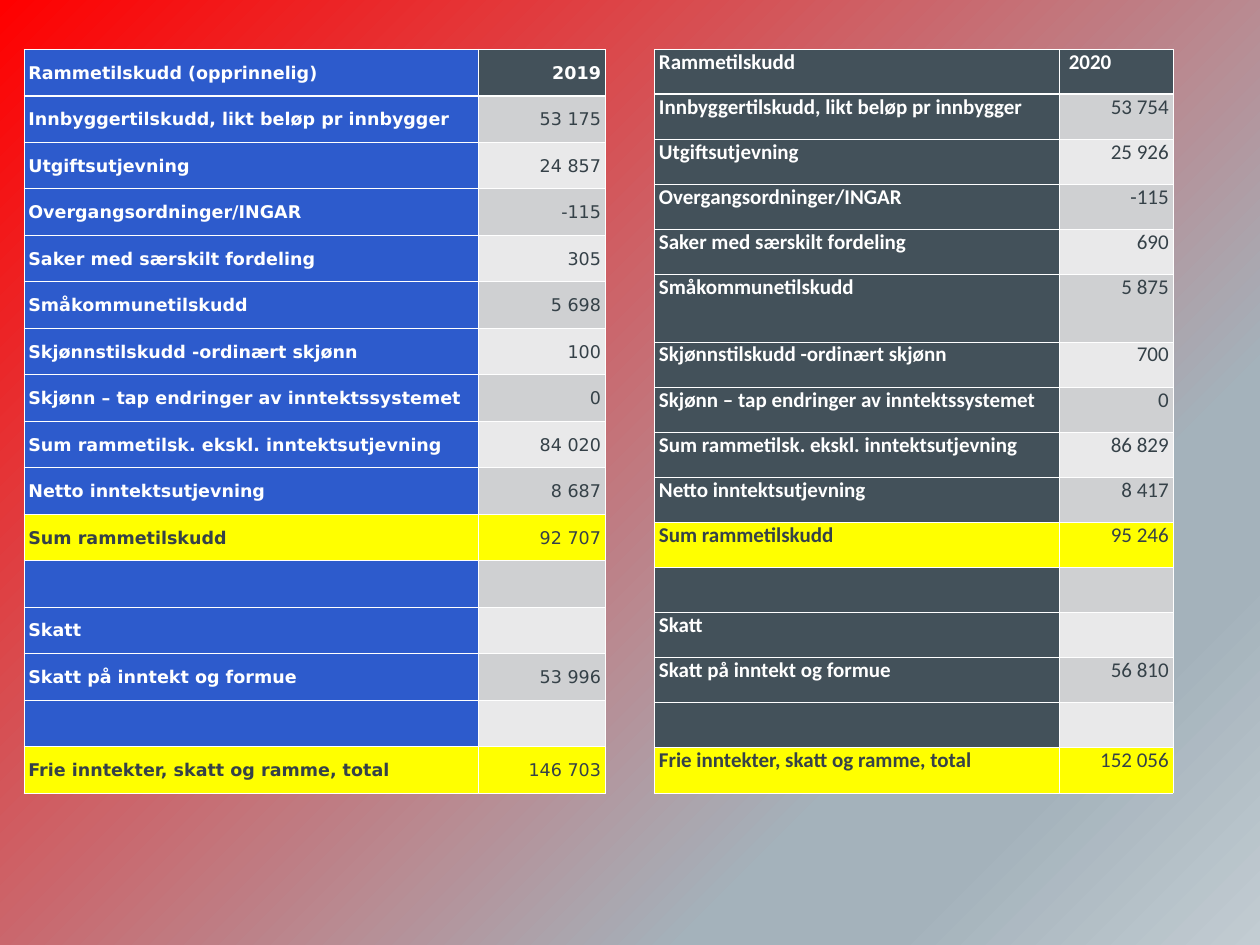
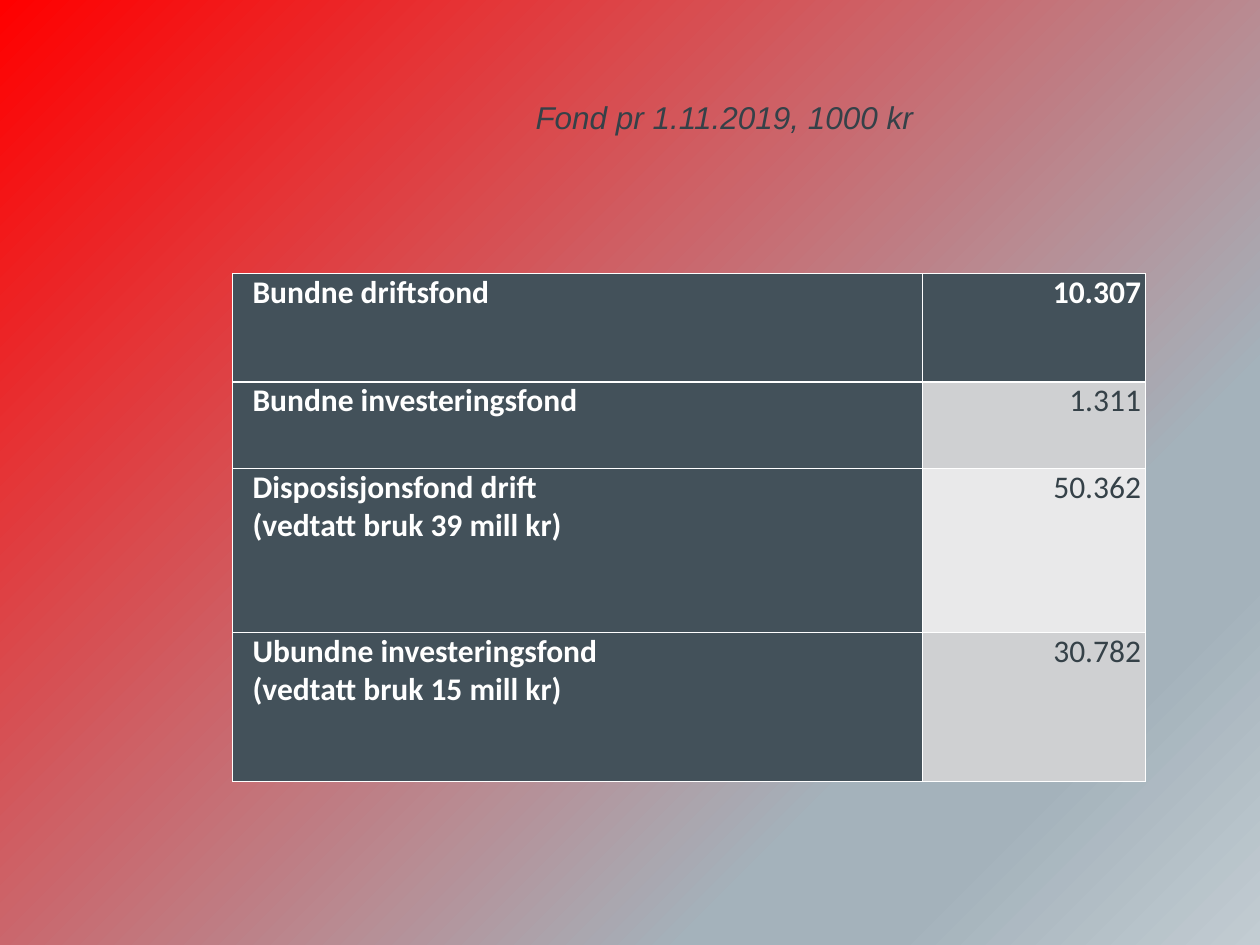
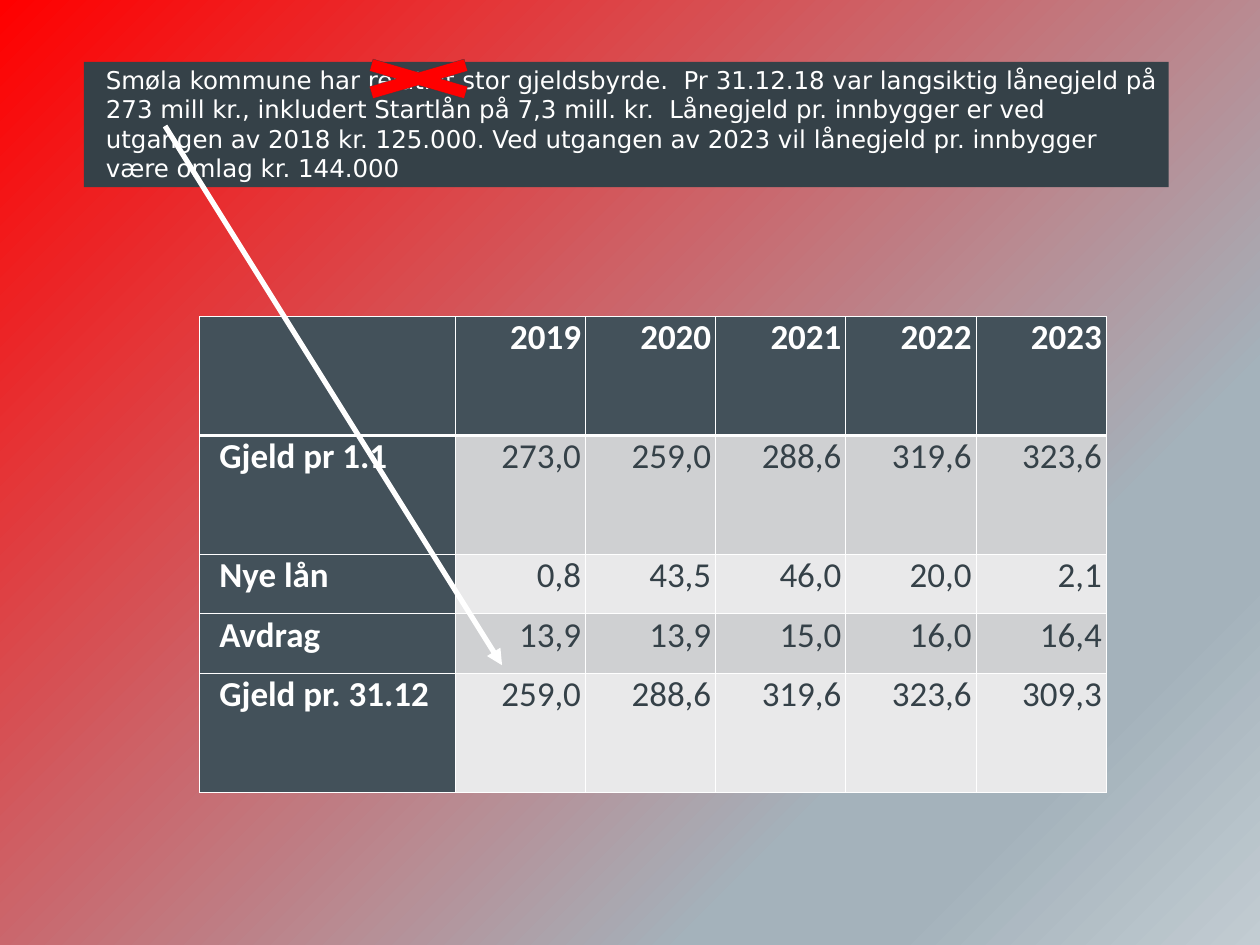
from dataclasses import dataclass

from pptx import Presentation
from pptx.dml.color import RGBColor
from pptx.enum.shapes import MSO_CONNECTOR, MSO_SHAPE
from pptx.enum.text import MSO_ANCHOR, MSO_AUTO_SIZE, PP_ALIGN
from pptx.oxml.ns import qn
from pptx.util import Pt
from lxml.etree import SubElement


@dataclass(frozen=True)
class Theme:
    white: str = "FFFFFF"
    dark: str = "354148"
    slate: str = "43515A"
    blue: str = "2D5BCC"
    yellow: str = "FFFF00"
    red: str = "FF0000"
    edge: str = "323C43"
    bands: tuple = ("E9E9EA", "CFD0D2")
    fade: tuple = ((0, "FF0000"), (74, "A4B2BB"), (83, "A4B2BB"), (100, "C2CCD2"))
    sans: str = "DejaVu Sans"
    body: str = "Calibri"
    head: str = "Arial"
    tiny: int = 20
    small: int = 24
    note: int = 28
    large: int = 36
    huge: int = 40


theme = Theme()
rgb = RGBColor.from_string


def write(frame, text, face, size, color, bold=False, italic=False,
          align=PP_ALIGN.LEFT, space=1.0):
    """Fill a text frame, one paragraph per line of text."""
    for i, line in enumerate(text.split("\n")):
        para = frame.add_paragraph() if i else frame.paragraphs[0]
        para.alignment = align
        para.line_spacing = space
        run = para.add_run()
        run.text = line
        font = run.font
        font.name, font.size = face, Pt(size)
        font.bold, font.italic = bold, italic
        font.color.rgb = rgb(color)


def grid(slide, left, top, cols, rows, data, face, size, label=theme.slate,
         inset=5, anchor=MSO_ANCHOR.TOP, space=1.0):
    """Add a table with a header row, a label column and banded values."""
    table = slide.shapes.add_table(
        len(rows), len(cols), Pt(left), Pt(top), Pt(sum(cols)), Pt(sum(rows))).table
    table.horz_banding = False
    for col, width in zip(table.columns, cols):
        col.width = Pt(width)
    for r, (height, line) in enumerate(zip(rows, data)):
        table.rows[r].height = Pt(height)
        total = line[0].startswith(("Sum rammetilskudd", "Frie"))
        for c, text in enumerate(line):
            cell = table.cell(r, c)
            cell.margin_left, cell.margin_right = Pt(5 if c else inset), Pt(5)
            cell.margin_top = cell.margin_bottom = 0
            cell.vertical_anchor = anchor
            props = cell._tc.get_or_add_tcPr()
            for side in ("L", "R", "T", "B"):
                thick = (r, side) in ((0, "B"), (1, "T"))
                border = SubElement(props, qn(f"a:ln{side}"), w=str(Pt(3 if thick else 1)))
                paint = SubElement(border, qn("a:solidFill"))
                SubElement(paint, qn("a:srgbClr"), val=theme.white)
            if total:
                fill = theme.yellow
            elif c == 0:
                fill = label
            else:
                fill = theme.bands[r % 2] if r else theme.slate
            cell.fill.solid()
            cell.fill.fore_color.rgb = rgb(fill)
            if text:
                strong = r == 0 or c == 0
                write(cell.text_frame, text, face, size,
                      theme.white if strong and not total else theme.dark, bold=strong,
                      align=PP_ALIGN.RIGHT if c else PP_ALIGN.LEFT, space=space)
    return table


deck = Presentation()
deck.slide_width, deck.slide_height = Pt(1440), Pt(1080)
master = deck.slide_master
back = master.background.fill
back.gradient()
back.gradient_angle = 315
stops = master.element.find(".//" + qn("a:gsLst"))
for stop in list(stops):
    stops.remove(stop)
for place, color in theme.fade:
    stop = SubElement(stops, qn("a:gs"), pos=str(place * 1000))
    SubElement(stop, qn("a:srgbClr"), val=color)
plain, titled = deck.slide_layouts[6], deck.slide_layouts[5]

# Grants, 2019 and 2020
grants = [
    ("Innbyggertilskudd, likt beløp pr innbygger", "53 175", "53 754"),
    ("Utgiftsutjevning", "24 857", "25 926"),
    ("Overgangsordninger/INGAR", "-115", "-115"),
    ("Saker med særskilt fordeling", "305", "690"),
    ("Småkommunetilskudd", "5 698", "5 875"),
    ("Skjønnstilskudd -ordinært skjønn", "100", "700"),
    ("Skjønn – tap endringer av inntektssystemet", "0", "0"),
    ("Sum rammetilsk. ekskl. inntektsutjevning", "84 020", "86 829"),
    ("Netto inntektsutjevning", "8 687", "8 417"),
    ("Sum rammetilskudd", "92 707", "95 246"),
    ("", "", ""),
    ("Skatt", "", ""),
    ("Skatt på inntekt og formue", "53 996", "56 810"),
    ("", "", ""),
    ("Frie inntekter, skatt og ramme, total", "146 703", "152 056"),
]
slide = deck.slides.add_slide(plain)
old = [("Rammetilskudd (opprinnelig)", "2019")] + [(n, a) for n, a, b in grants]
new = [("Rammetilskudd", "2020")] + [(n, b) for n, a, b in grants]
grid(slide, 27.4, 56.2, [519.1, 145.4], [53.14] * 16, old, theme.sans, theme.tiny,
     label=theme.blue, anchor=MSO_ANCHOR.MIDDLE, space=1.07)
table = grid(slide, 748.1, 56.2, [463, 129.6], [51.55] * 5 + [77] + [51.55] * 10,
             new, theme.body, theme.small)
year = table.cell(0, 1)
year.margin_left = Pt(10.4)
year.text_frame.paragraphs[0].alignment = PP_ALIGN.LEFT

# Funds
slide = deck.slides.add_slide(titled)
title = slide.shapes.title
title.left, title.top, title.width, title.height = Pt(604.8), Pt(108.7), Pt(450), Pt(51)
frame = title.text_frame
frame.word_wrap = False
frame.auto_size = MSO_AUTO_SIZE.NONE
frame.vertical_anchor = MSO_ANCHOR.TOP
write(frame, "Fond pr 1.11.2019, 1000 kr", theme.head, theme.large, theme.dark, italic=True)
funds = [
    ("Bundne driftsfond", "10.307"),
    ("Bundne investeringsfond", "1.311"),
    ("Disposisjonsfond drift\n(vedtatt bruk 39 mill kr)", "50.362"),
    ("Ubundne investeringsfond\n(vedtatt bruk 15 mill kr)", "30.782"),
]
grid(slide, 265.7, 312.5, [788.8, 254.6], [123.8, 98.8, 187.2, 171.2], funds,
     theme.body, theme.large, inset=23)

# Debt
slide = deck.slides.add_slide(plain)
box = slide.shapes.add_shape(MSO_SHAPE.RECTANGLE, Pt(95.8), Pt(70.6), Pt(1239.8), Pt(143.3))
box.shadow.inherit = False
box.fill.solid()
box.fill.fore_color.rgb = rgb(theme.dark)
box.line.fill.background()
frame = box.text_frame
frame.word_wrap = True
frame.vertical_anchor = MSO_ANCHOR.TOP
frame.margin_left = Pt(25.2)
write(frame, "Smøla kommune har relativt stor gjeldsbyrde.  Pr 31.12.18 var langsiktig "
      "lånegjeld på 273 mill kr., inkludert Startlån på 7,3 mill. kr.  Lånegjeld pr. "
      "innbygger er ved utgangen av 2018 kr. 125.000. Ved utgangen av 2023 vil "
      "lånegjeld pr. innbygger være omlag kr. 144.000",
      theme.sans, theme.note, theme.white)

cross = slide.shapes.add_shape(
    MSO_SHAPE.MATH_MULTIPLY, Pt(374.4), Pt(59.8), Pt(208), Pt(60.5))
cross.shadow.inherit = False
cross.fill.solid()
cross.fill.fore_color.rgb = rgb(theme.red)
cross.line.color.rgb = rgb(theme.edge)
cross.line.width = Pt(0.25)

debt = [
    ("", "2019", "2020", "2021", "2022", "2023"),
    ("Gjeld pr 1.1", "273,0", "259,0", "288,6", "319,6", "323,6"),
    ("Nye lån", "0,8", "43,5", "46,0", "20,0", "2,1"),
    ("Avdrag", "13,9", "13,9", "15,0", "16,0", "16,4"),
    ("Gjeld pr. 31.12", "259,0", "288,6", "319,6", "323,6", "309,3"),
]
grid(slide, 227.7, 361.6, [292.5] + [148.8] * 5, [68 * n for n in (2, 2, 1, 1, 2)],
     debt, theme.body, theme.huge, inset=23)

arrow = slide.shapes.add_connector(
    MSO_CONNECTOR.STRAIGHT, Pt(188.6), Pt(144), Pt(573.8), Pt(760.3))
arrow.line.color.rgb = rgb(theme.white)
arrow.line.width = Pt(6)
SubElement(arrow.line._get_or_add_ln(), qn("a:tailEnd"), type="triangle")
SubElement(arrow._element.spPr, qn("a:effectLst"))

deck.save("out.pptx")
